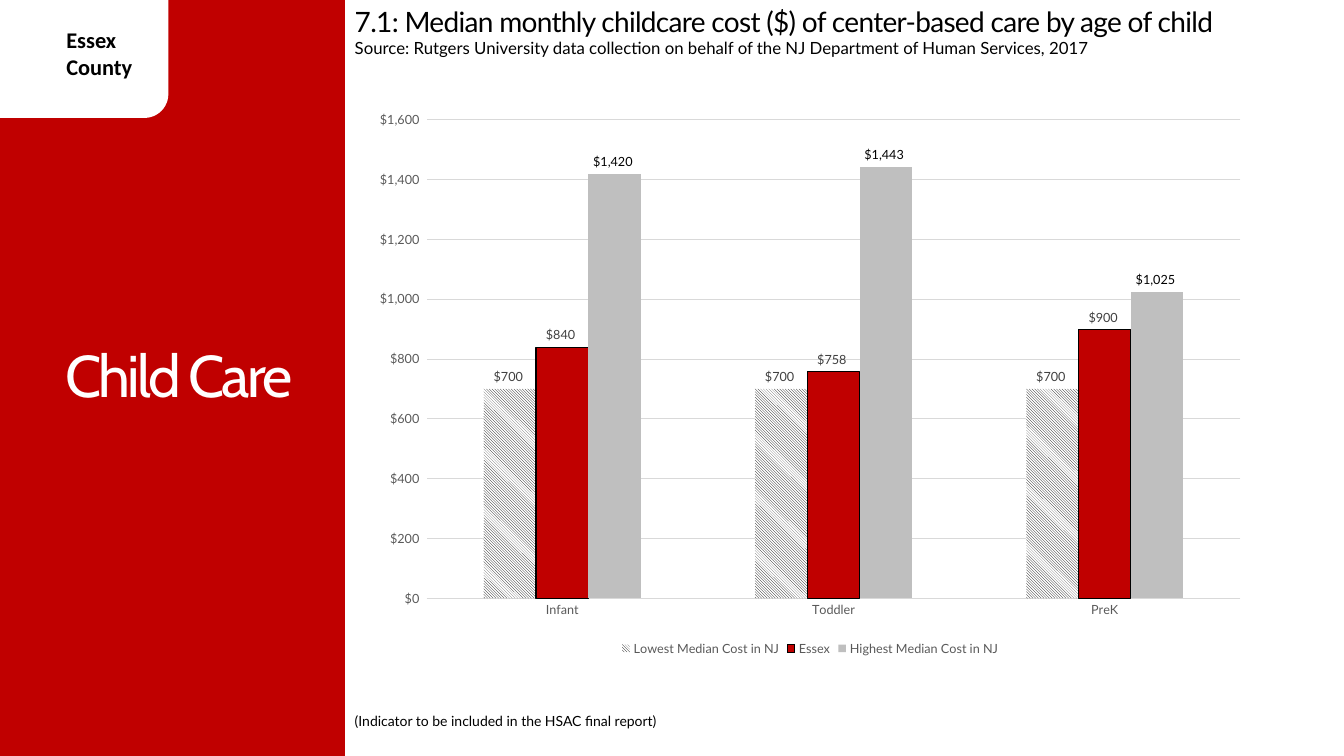
from pptx import Presentation
from pptx.chart.data import CategoryChartData
from pptx.dml.color import RGBColor
from pptx.enum.chart import XL_CHART_TYPE as ChartType, XL_LABEL_POSITION as LabelPosition
from pptx.enum.chart import XL_LEGEND_POSITION as LegendPosition, XL_TICK_MARK as TickMark
from pptx.enum.dml import MSO_PATTERN as Pattern
from pptx.enum.shapes import MSO_SHAPE as Shape
from pptx.enum.text import MSO_ANCHOR as Anchor, PP_ALIGN as Align
from pptx.util import Inches, Pt

RED, WHITE, BLACK = "C00000", "FFFFFF", "000000"
AXIS_GRAY, GRID_GRAY, LABEL_GRAY, BAR_GRAY = "595959", "D9D9D9", "404040", "BFBFBF"
DOLLARS = r'"$"#,##0_);[Red]\("$"#,##0\)'
SIDEBAR_WIDTH = 3.42

AGES = ["Infant", "Toddler", "PreK"]
COSTS = {
    "Lowest Median Cost in NJ": (700, 700, 700),
    "Essex": (840, 758, 900),
    "Highest Median Cost in NJ": (1420, 1443, 1025),
}


def color(hex_string):
    return RGBColor.from_string(hex_string)


def style_font(font, size, hex_string, name="Lato", bold=False):
    font.size, font.name, font.bold = Pt(size), name, bold
    font.color.rgb = color(hex_string)


def add_text(page, text, left, top, width, height, size=12, hex_string=BLACK, name="Lato",
             bold=False, align=Align.LEFT, anchor=Anchor.TOP, line_spacing=None, tracking=0):
    box = page.shapes.add_textbox(Inches(left), Inches(top), Inches(width), Inches(height))
    frame = box.text_frame
    frame.word_wrap, frame.vertical_anchor = True, anchor
    para = frame.paragraphs[0]
    para.alignment, para.line_spacing = align, line_spacing
    span = para.add_run()
    span.text = text
    style_font(span.font, size, hex_string, name, bold)
    if tracking:
        span._r.get_or_add_rPr().set("spc", str(round(tracking * 100)))


def add_block(page, kind, left, top, width, height, hex_string):
    block = page.shapes.add_shape(kind, Inches(left), Inches(top), Inches(width), Inches(height))
    block.shadow.inherit = False
    block.fill.solid()
    block.fill.fore_color.rgb = color(hex_string)
    block.line.fill.background()


def add_sidebar(page, left, top, width, height):
    add_block(page, Shape.RECTANGLE, left, top, width, height, RED)
    # County badge, with only its lower right corner rounded on the page
    add_block(page, Shape.ROUNDED_RECTANGLE, left - 0.33, top - 0.25, 2, 1.42, WHITE)
    add_text(page, "Essex County", left + 0.56, top + 0.21, 1.11, 0.64,
             size=16, name="Calibri", bold=True)
    # Section title
    add_text(page, "Child Care", left, top + 0.75, width + 0.13, height - 1.5, size=42,
             hex_string=WHITE, name="Cabin", align=Align.CENTER, anchor=Anchor.MIDDLE,
             line_spacing=0.9, tracking=-2)


def add_captions(page, left, top, width, height):
    add_text(page, "7.1: Median monthly childcare cost ($) of center-based care by age of child",
             left, top, width, 0.44, size=20, tracking=-0.5)
    add_text(page, "Source: Rutgers University data collection on behalf of "
             "the NJ Department of Human Services, 2017", left, top + 0.33, width, 0.3)
    add_text(page, "(Indicator to be included in the HSAC final report)",
             left, top + height - 0.55, width, 0.41, size=10,
             align=Align.JUSTIFY, anchor=Anchor.MIDDLE)


def style_axes(chart):
    for axis in (chart.category_axis, chart.value_axis):
        axis.major_tick_mark = axis.minor_tick_mark = TickMark.NONE
        style_font(axis.tick_labels.font, 9, AXIS_GRAY)
    costs = chart.value_axis
    costs.minimum_scale, costs.maximum_scale, costs.major_unit = 0, 1600, 200
    costs.tick_labels.number_format = DOLLARS
    costs.tick_labels.number_format_is_linked = False
    costs.format.line.fill.background()
    for line in (chart.category_axis.format.line, costs.major_gridlines.format.line):
        line.color.rgb, line.width = color(GRID_GRAY), Pt(0.75)


def style_series(plot):
    plot.gap_width, plot.overlap, plot.vary_by_categories = 219, 0, False
    lowest, essex, highest = plot.series
    hatch = lowest.format.fill
    hatch.patterned()
    hatch.pattern = Pattern.LIGHT_DOWNWARD_DIAGONAL
    hatch.fore_color.rgb, hatch.back_color.rgb = color(BLACK), color(WHITE)
    for series, fill in ((essex, RED), (highest, BAR_GRAY)):
        series.format.fill.solid()
        series.format.fill.fore_color.rgb = color(fill)
    for series in (lowest, highest):
        series.format.line.fill.background()
    essex.format.line.color.rgb, essex.format.line.width = color(BLACK), Pt(0.75)

    # Dollar labels above the bars
    for series, label_color in zip(plot.series, (LABEL_GRAY, LABEL_GRAY, BLACK)):
        series.invert_if_negative = False
        labels = series.data_labels
        labels.show_value, labels.position = True, LabelPosition.OUTSIDE_END
        labels.number_format, labels.number_format_is_linked = DOLLARS, False
        style_font(labels.font, 9, label_color)


def add_cost_chart(page, left, top, width, height):
    data = CategoryChartData(number_format=DOLLARS)
    data.categories = AGES
    for name, values in COSTS.items():
        data.add_series(name, values)
    chart = page.shapes.add_chart(ChartType.COLUMN_CLUSTERED, Inches(left), Inches(top),
                                  Inches(width), Inches(height), data).chart
    style_font(chart.font, 10, BLACK, "Calibri")
    chart.has_title = False
    style_axes(chart)
    style_series(chart.plots[0])
    chart.has_legend = True
    chart.legend.position, chart.legend.include_in_layout = LegendPosition.BOTTOM, False
    style_font(chart.legend.font, 9, AXIS_GRAY)


def main():
    deck = Presentation()
    deck.slide_width, deck.slide_height = Inches(13.33), Inches(7.5)
    page = deck.slides.add_slide(deck.slide_layouts[6])
    add_sidebar(page, 0, 0, SIDEBAR_WIDTH, 7.5)
    add_captions(page, SIDEBAR_WIDTH, 0, 9.86, 7.5)
    add_cost_chart(page, SIDEBAR_WIDTH + 0.17, 1, 8.89, 5.55)
    deck.save("out.pptx")


if __name__ == "__main__":
    main()
